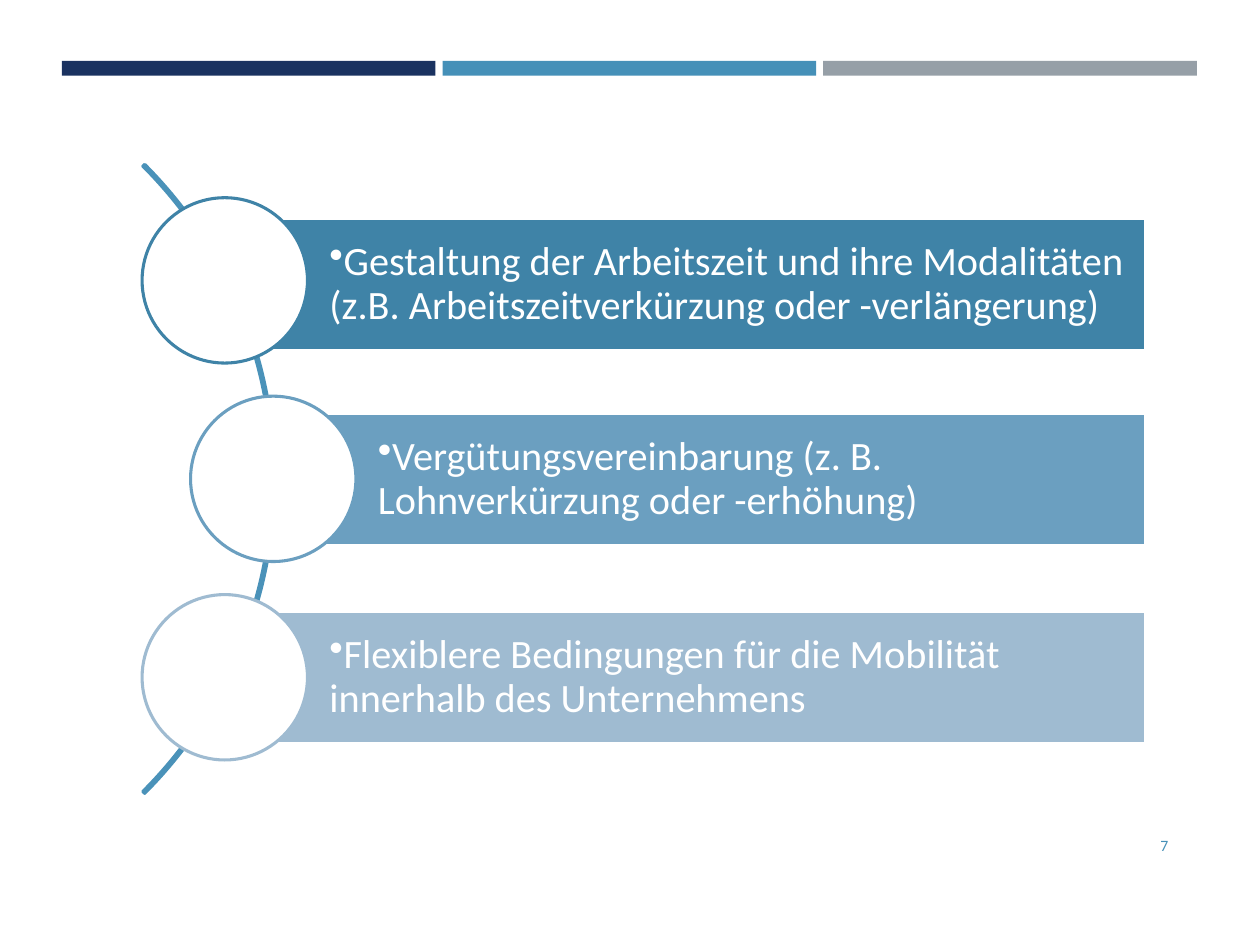
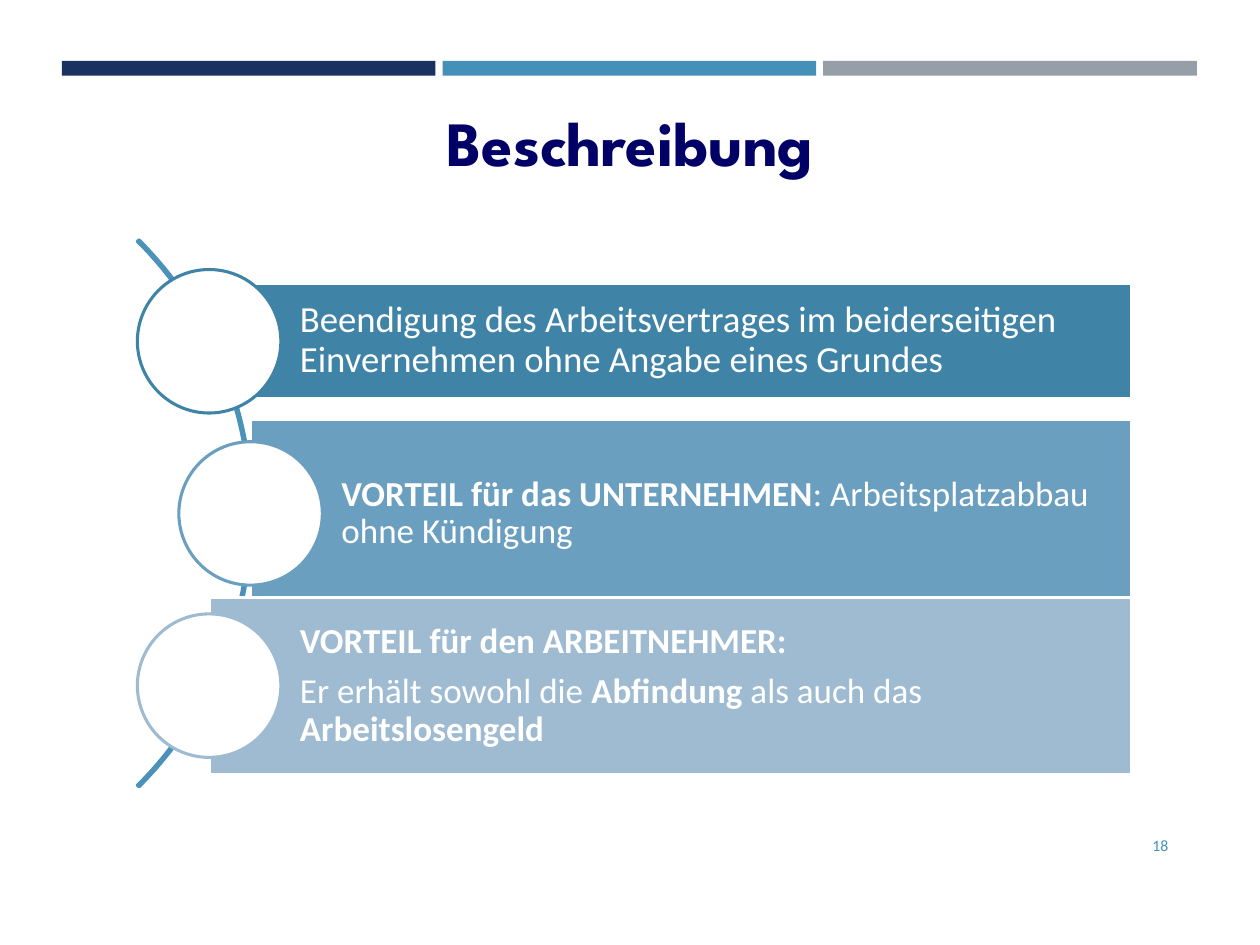
from typing import NamedTuple

from lxml import etree
from pptx import Presentation
from pptx import util as u
from pptx.dml.color import RGBColor
from pptx.enum import shapes, text
from pptx.oxml import ns

Pt = u.Pt
MSO = shapes.MSO_SHAPE
COLORS = {
    "navy": "1A3260",
    "blue": "4590B8",
    "grey": "969FA7",
    "arc": "4A92B9",
    "title": "000066",
    "white": "FFFFFF",
}
BAND_COLORS = ("3F83A7", "6B9FC0", "9FBBD1")
BODY_FONT = "Calibri"
TITLE_FONT = "League Spartan"
LINE_WIDTH = 1.75
INSET = 4.5


class Band(NamedTuple):
    top: float
    height: float
    size: float
    paragraphs: tuple[str, ...]


class Diagram(NamedTuple):
    circle: float
    outer_left: float
    inner_left: float
    top: float
    pitch: float
    right: float
    arc: float
    bulleted: bool
    bands: tuple[Band, ...]


WORKING_TERMS = Diagram(
    94.5, 81.2, 108.9, 113, 113.4, 654.6, 508.3, True,
    (
        Band(124.6, 75.6, 23, (
            "Gestaltung der Arbeitszeit und ihre Modalitäten "
            "(z.B. Arbeitszeitverkürzung oder -verlängerung)",)),
        Band(236.2, 75.6, 23, (
            "Vergütungsvereinbarung (z. B. Lohnverkürzung oder -erhöhung)",)),
        Band(349.2, 75.6, 23, (
            "Flexiblere Bedingungen für die Mobilität "
            "innerhalb des Unternehmens",)),
    ),
)
TERMINATION = Diagram(
    82, 78.5, 102.2, 154, 98.4, 646.4, 442.1, False,
    (
        Band(162, 65.5, 21, (
            "Beendigung des Arbeitsvertrages im beiderseitigen "
            "Einvernehmen ohne Angabe eines Grundes",)),
        Band(239.8, 107.3, 20, (
            "*VORTEIL für das UNTERNEHMEN*: Arbeitsplatzabbau ohne Kündigung",)),
        Band(341.3, 101.5, 20, (
            "*VORTEIL für den ARBEITNEHMER:*",
            "Er erhält sowohl die *Abfindung* als auch das *Arbeitslosengeld*")),
    ),
)


def rgb(value: str) -> RGBColor:
    return RGBColor.from_string(value)


def add_shape(s, kind, left: float, top: float, width: float, height: float,
              fill: str | None = None, line: str | None = None):
    sp = s.shapes.add_shape(kind, Pt(left), Pt(top), Pt(width), Pt(height))
    sp.shadow.inherit = False
    if fill:
        sp.fill.solid()
        sp.fill.fore_color.rgb = rgb(fill)
    else:
        sp.fill.background()
    if line:
        sp.line.color.rgb = rgb(line)
        sp.line.width = Pt(LINE_WIDTH)
    else:
        sp.line.fill.background()
    return sp


def format_font(font, name: str, size: float, color: str, bold: bool = False) -> None:
    font.name = name
    font.size = Pt(size)
    font.color.rgb = rgb(color)
    font.bold = bold


def add_bullet(p) -> None:
    pr = p._p.get_or_add_pPr()
    pr.set("marL", "0")
    pr.set("indent", "0")
    etree.SubElement(pr, ns.qn("a:buChar")).set("char", "•")


def add_frame(s, number: int) -> None:
    for i, name in enumerate(("navy", "blue", "grey")):
        add_shape(s, MSO.RECTANGLE, 35.4 + 217.5 * i, 34.8, 213.5, 8.4, COLORS[name])
    sp = s.shapes.add_textbox(Pt(614.2), Pt(468.7), Pt(60.5), Pt(28.8))
    tf = sp.text_frame
    tf.word_wrap = True
    tf.vertical_anchor = text.MSO_ANCHOR.MIDDLE
    tf.text = str(number)
    p = tf.paragraphs[0]
    p.alignment = text.PP_ALIGN.RIGHT
    format_font(p.runs[0].font, BODY_FONT, 9, COLORS["blue"])


def add_title(s, title: str) -> None:
    sp = s.shapes.title
    sp.left, sp.top, sp.width, sp.height = Pt(49), Pt(55.4), Pt(622), Pt(51)
    tf = sp.text_frame
    tf.text = title
    tf.word_wrap = True
    tf.auto_size = text.MSO_AUTO_SIZE.NONE
    tf.vertical_anchor = text.MSO_ANCHOR.TOP
    p = tf.paragraphs[0]
    p.alignment = text.PP_ALIGN.CENTER
    format_font(p.runs[0].font, TITLE_FONT, 36, COLORS["title"], True)


def fill_band(sp, band: Band, left_inset: float, bulleted: bool) -> None:
    tf = sp.text_frame
    tf.word_wrap = True
    tf.vertical_anchor = text.MSO_ANCHOR.MIDDLE
    tf.margin_left = Pt(left_inset)
    tf.margin_top = tf.margin_right = tf.margin_bottom = Pt(INSET)
    for i, line in enumerate(band.paragraphs):
        p = tf.add_paragraph() if i else tf.paragraphs[0]
        p.alignment = text.PP_ALIGN.LEFT
        p.line_spacing = 0.9
        if i:
            p.space_before = Pt(0.35 * band.size)
        if bulleted:
            add_bullet(p)
        for j, part in enumerate(line.split("*")):
            if part:
                r = p.add_run()
                r.text = part
                format_font(r.font, BODY_FONT, band.size, COLORS["white"], j % 2 == 1)


def add_diagram(s, d: Diagram) -> None:
    radius = d.circle / 2
    middle = d.top + d.pitch + radius
    arc_right = d.inner_left + radius + 1
    arc = add_shape(s, MSO.BLOCK_ARC, arc_right - d.arc, middle - d.arc / 2,
                    d.arc, d.arc, line=COLORS["arc"])
    for i, value in enumerate((189, 27, 0.003)):
        arc.adjustments[i] = value
    for i, (band, color) in enumerate(zip(d.bands, BAND_COLORS)):
        left = d.inner_left if i == 1 else d.outer_left
        center = left + radius
        bar = add_shape(s, MSO.RECTANGLE, center, band.top, d.right - center,
                        band.height, color, COLORS["white"])
        fill_band(bar, band, 0.633 * d.circle, d.bulleted)
        add_shape(s, MSO.OVAL, left, d.top + i * d.pitch, d.circle, d.circle,
                  COLORS["white"], color)


def main() -> None:
    prs = Presentation()
    prs.slide_width, prs.slide_height = Pt(720), Pt(540)
    title_only, blank = prs.slide_layouts[5], prs.slide_layouts[6]

    s = prs.slides.add_slide(blank)
    add_frame(s, 7)
    add_diagram(s, WORKING_TERMS)

    s = prs.slides.add_slide(title_only)
    add_frame(s, 18)
    add_title(s, "Beschreibung")
    add_diagram(s, TERMINATION)

    prs.save("out.pptx")


if __name__ == "__main__":
    main()
